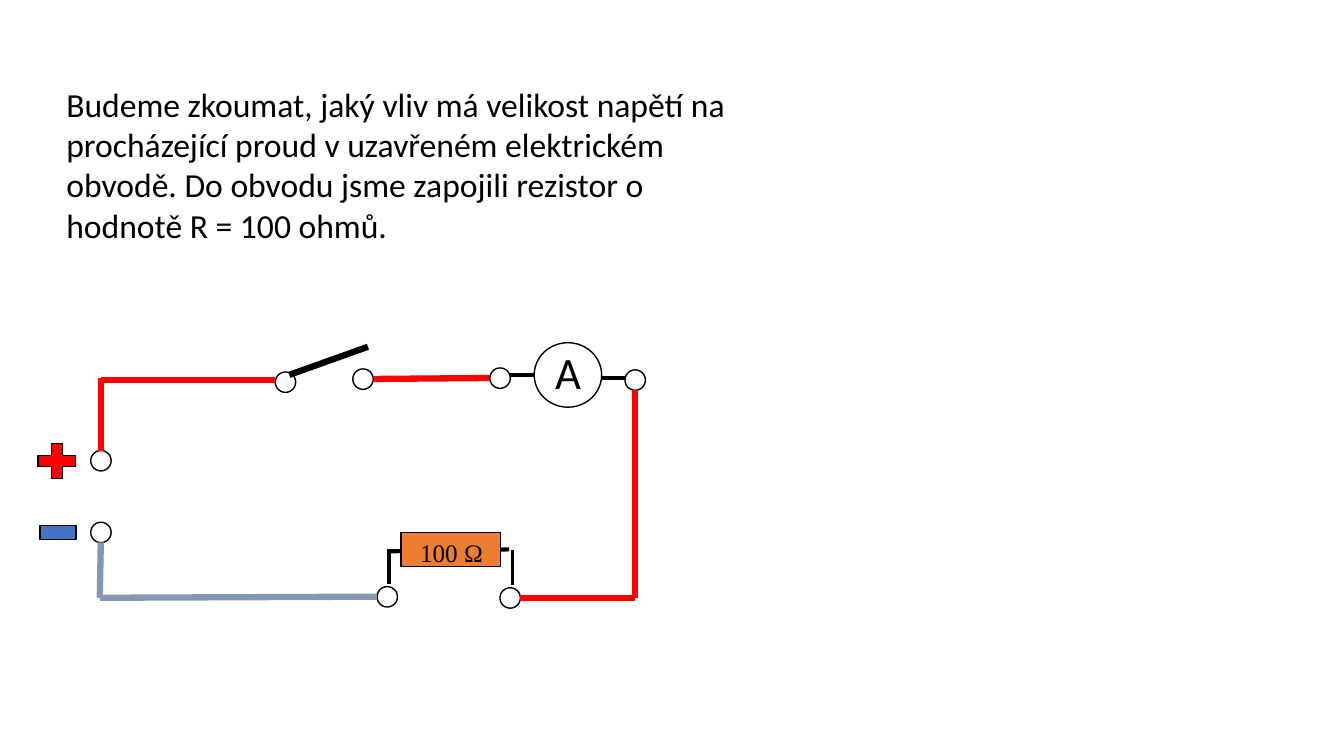
from lxml import etree
from pptx import Presentation
from pptx.dml.color import RGBColor
from pptx.enum import shapes, text
from pptx.oxml.ns import qn
from pptx.util import Pt

BLACK = RGBColor(0x00, 0x00, 0x00)
WHITE = RGBColor(0xFF, 0xFF, 0xFF)
RED = RGBColor(0xFF, 0x00, 0x00)
BLUE = RGBColor(0x44, 0x72, 0xC4)
ORANGE = RGBColor(0xED, 0x7D, 0x31)
GREY_BLUE = RGBColor(0x84, 0x97, 0xB0)
TERMINAL_SIZE = 14.6

presentation = Presentation()
presentation.slide_width = Pt(960)
presentation.slide_height = Pt(540)
slide = presentation.slides.add_slide(presentation.slide_layouts[6])

wires_behind = [
    (267.1, 270.7, 349.9, 270, RED, 4.5),
    (364.3, 267.8, 382.3, 267.8, BLACK, 3),
    (276.5, 393.8, 363.6, 392.4, BLACK, 3),
]
wires_in_front = [
    (277.9, 392.4, 277.9, 416.9, BLACK, 2.25),
    (365.8, 393.1, 365.8, 417.6, BLACK, 2.25),
    (206.6, 267.8, 262.8, 247.7, BLACK, 4.5),
    (429.1, 270, 447.1, 270, BLACK, 3),
    (72, 321.8, 72, 270, RED, 4.5),
    (72, 271.4, 196.6, 271.4, RED, 4.5),
    (453.6, 278.6, 453.6, 427, RED, 4.5),
    (371.5, 427, 453.6, 427, RED, 4.5),
    (72, 387.4, 71.3, 427, GREY_BLUE, 4.5),
    (71.3, 427, 269.3, 426.2, GREY_BLUE, 4.5),
]
terminals = [
    (269.3, 419), (357.1, 419.8), (446.4, 264.2), (252, 263.5),
    (196.6, 265.7), (349.9, 262.8), (64.8, 373), (64.8, 321.8),
]
ellipse = shapes.MSO_SHAPE.OVAL
symbols = [(ellipse, 381.6, 244.8, 48.2, 46.1, None)]
symbols += [(ellipse, left, top, TERMINAL_SIZE, TERMINAL_SIZE, WHITE) for left, top in terminals]
symbols += [
    (shapes.MSO_SHAPE.MATH_PLUS, 22.3, 312.5, 36.7, 33.8, RED),
    (shapes.MSO_SHAPE.MATH_MINUS, 23.8, 359.3, 35.3, 42.5, BLUE),
    (shapes.MSO_SHAPE.RECTANGLE, 286.3, 380.2, 71.3, 24.5, ORANGE),
]
labels = [
    (40.3, 56.2, 489.6, 123.8, "Calibri", 24, [
        "Budeme zkoumat, jaký vliv má velikost napětí na",
        "procházející proud v uzavřeném elektrickém",
        "obvodě. Do obvodu jsme zapojili rezistor o",
        "hodnotě R = 100 ohmů.",
    ]),
    (389.5, 242.6, 33.1, 46.1, "Calibri", 32, ["A"]),
    (293, 380.2, 59.8, 28.8, "Times New Roman", 18, ["100 Ω"]),
]


def draw_wires(wires):
    for x1, y1, x2, y2, color, width in wires:
        wire = slide.shapes.add_connector(
            shapes.MSO_CONNECTOR.STRAIGHT, Pt(x1), Pt(y1), Pt(x2), Pt(y2))
        wire.line.color.rgb = color
        wire.line.width = Pt(width)
        etree.SubElement(wire.element.spPr, qn("a:effectLst"))


draw_wires(wires_behind)

for kind, left, top, width, height, fill in symbols:
    shape = slide.shapes.add_shape(kind, Pt(left), Pt(top), Pt(width), Pt(height))
    shape.shadow.inherit = False
    shape.line.color.rgb = BLACK
    shape.line.width = Pt(1)
    if fill is None:
        shape.fill.background()
    else:
        shape.fill.solid()
        shape.fill.fore_color.rgb = fill

draw_wires(wires_in_front)

for left, top, width, height, font_name, size, lines in labels:
    box = slide.shapes.add_textbox(Pt(left), Pt(top), Pt(width), Pt(height))
    frame = box.text_frame
    frame.word_wrap = False
    frame.auto_size = text.MSO_AUTO_SIZE.SHAPE_TO_FIT_TEXT
    frame.text = "\n".join(lines)
    for paragraph in frame.paragraphs:
        paragraph.font.name = font_name
        paragraph.font.size = Pt(size)
        paragraph.font.color.rgb = BLACK

presentation.save("out.pptx")
